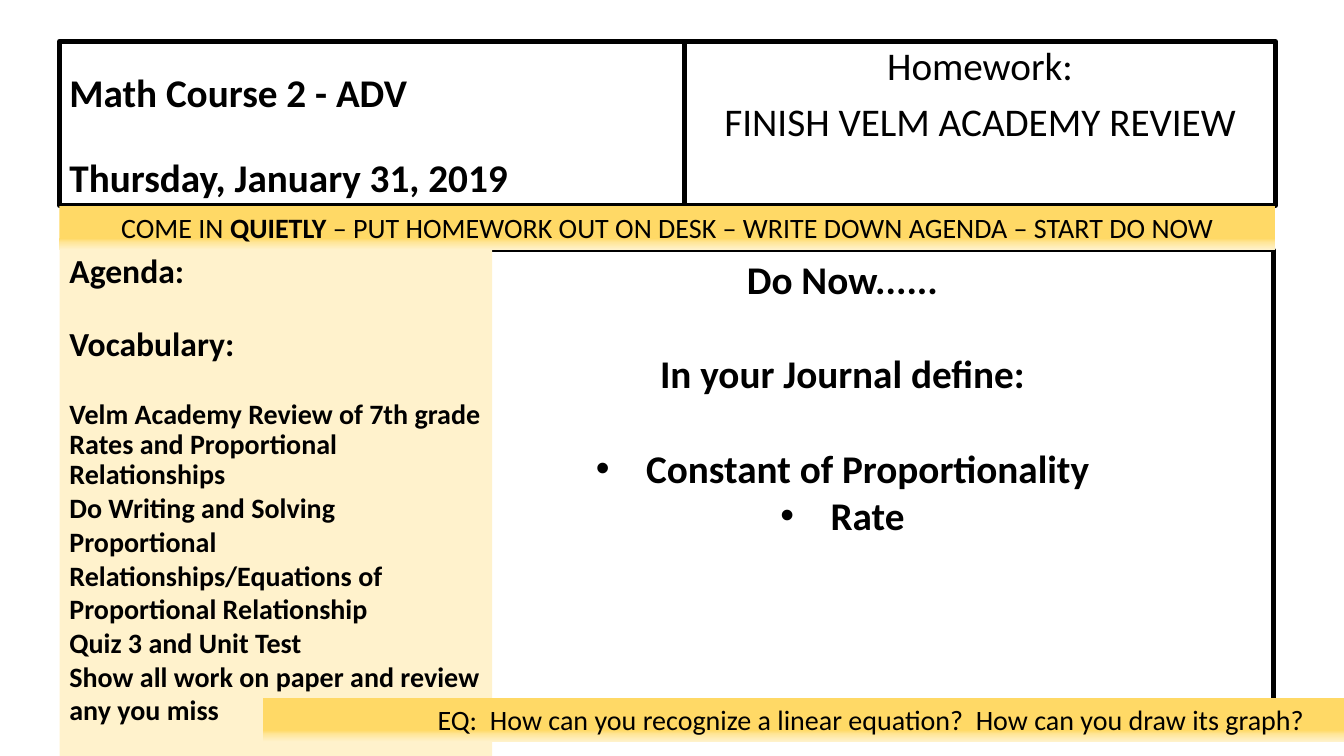
from lxml import etree
from pptx import Presentation
from pptx.dml.color import RGBColor
from pptx.enum.shapes import MSO_SHAPE
from pptx.enum.text import MSO_ANCHOR, PP_ALIGN
from pptx.oxml.ns import qn
from pptx.util import Inches, Pt

RECTANGLE = MSO_SHAPE.RECTANGLE
LEFT, CENTER = PP_ALIGN.LEFT, PP_ALIGN.CENTER
TOP, BOTTOM = MSO_ANCHOR.TOP, MSO_ANCHOR.BOTTOM

COLORS = {"ink": "000000", "cream": "FFF2CC", "gold": "FFD966", "pale_gold": "FFE699"}
BAND_STOPS = [(0, "gold"), (74, "gold"), (83, "pale_gold"), (100, "cream")]
FONT = "Calibri"

SLIDE_W, SLIDE_H = 13.33, 7.5
MARGIN, HEADER_TOP, HEADER_H = 0.59, 0.41, 1.63
BOARD_W, TITLE_W = 12.06, 6.2
BAND_H = 0.44
BAND_TOP = HEADER_TOP + HEADER_H
BODY_TOP = BAND_TOP + BAND_H


def color(name):
    return RGBColor.from_string(COLORS[name])


def add_panel(slide, box, anchor=TOP, outlined=False):
    panel = slide.shapes.add_shape(RECTANGLE, *(Inches(v) for v in box))
    panel.shadow.inherit = False
    panel.fill.background()
    if outlined:
        panel.line.color.rgb = color("ink")
        panel.line.width = Pt(3.25)
    else:
        panel.line.fill.background()
    panel.text_frame.word_wrap = True
    panel.text_frame.vertical_anchor = anchor
    return panel


def write(panel, runs, size, align=LEFT, spacing=1.0, before=0, bullet=False):
    """Append a paragraph; runs is a list of (text, bold) pairs."""
    frame = panel.text_frame
    paragraph = frame.paragraphs[0]
    if paragraph.runs:
        paragraph = frame.add_paragraph()
    paragraph.alignment = align
    paragraph.line_spacing = spacing
    paragraph.space_before = Pt(before)
    if bullet:
        props = paragraph._p.get_or_add_pPr()
        props.set("marL", str(Inches(0.5)))
        props.set("indent", str(Inches(-0.5)))
        etree.SubElement(props, qn("a:buFont"), typeface="Arial")
        etree.SubElement(props, qn("a:buChar"), char="•")
    for text, bold in runs:
        run = paragraph.add_run()
        run.text = text
        run.font.name = FONT
        run.font.size = Pt(size)
        run.font.bold = bold
        run.font.color.rgb = color("ink")


def add_course_title(slide, box):
    panel = add_panel(slide, box, BOTTOM, outlined=True)
    write(panel, [("Math Course 2 - ADV", True)], 28, spacing=0.9)
    write(panel, [("Thursday, January 31, 2019", True)], 28, spacing=0.9, before=30)


def add_homework(slide, box):
    panel = add_panel(slide, box, outlined=True)
    for text, before in [("Homework:", 0), ("FINISH VELM ACADEMY REVIEW", 10)]:
        write(panel, [(text, False)], 28, CENTER, 0.9, before)


def add_do_now(slide, box):
    panel = add_panel(slide, box, outlined=True)
    write(panel, [("Do Now......", True)], 28, CENTER)
    write(panel, [("In your Journal define:", True)], 28, CENTER, before=34)
    for term, before in [("Constant of Proportionality", 34), ("Rate", 0)]:
        write(panel, [(term, True)], 28, CENTER, before=before, bullet=True)


def add_band(slide, box, runs):
    """Gold strip fading to cream at its lower edge, with one centred line."""
    band = add_panel(slide, box)
    band.fill.gradient()
    band.fill.gradient_angle = 270
    stops = band._element.spPr.find(".//" + qn("a:gsLst"))
    for stop in list(stops):
        stops.remove(stop)
    for percent, name in BAND_STOPS:
        stop = etree.SubElement(stops, qn("a:gs"), pos=str(percent * 1000))
        etree.SubElement(stop, qn("a:srgbClr"), val=COLORS[name])
    write(band, runs, 20, CENTER)


def add_agenda(slide, box):
    panel = add_panel(slide, box)
    panel.fill.solid()
    panel.fill.fore_color.rgb = color("cream")
    lines = [
        ("Agenda:", 24, 0.9, 0),
        ("Vocabulary:", 24, 0.9, 26),
        ("Velm Academy Review of 7th grade Rates and Proportional Relationships", 20, 0.9, 26),
        ("Do Writing and Solving Proportional Relationships/Equations of "
         "Proportional Relationship", 20, 1.0, 0),
        ("Quiz 3 and Unit Test", 20, 1.0, 0),
        ("Show all work on paper and review any you miss", 20, 1.0, 0),
    ]
    for text, size, spacing, before in lines:
        write(panel, [(text, True)], size, LEFT, spacing, before)


def main():
    deck = Presentation()
    deck.slide_width, deck.slide_height = Inches(SLIDE_W), Inches(SLIDE_H)
    slide = deck.slides.add_slide(deck.slide_layouts[6])
    add_course_title(slide, (MARGIN, HEADER_TOP, TITLE_W, HEADER_H))
    add_homework(slide, (MARGIN + TITLE_W, HEADER_TOP, BOARD_W - TITLE_W, HEADER_H))
    add_do_now(slide, (4.08, BODY_TOP, 8.55, 4.81))
    add_band(slide, (MARGIN, BAND_TOP, BOARD_W, BAND_H), [
        ("COME IN ", False),
        ("QUIETLY", True),
        (" – PUT HOMEWORK OUT ON DESK – WRITE DOWN AGENDA – START DO NOW", False),
    ])
    add_agenda(slide, (MARGIN, BODY_TOP, 4.29, 5.36))
    add_band(slide, (2.61, 6.92, BOARD_W, BAND_H), [
        ("EQ:  How can you recognize a linear equation?  How can you draw its graph?", False),
    ])
    deck.save("out.pptx")


if __name__ == "__main__":
    main()
